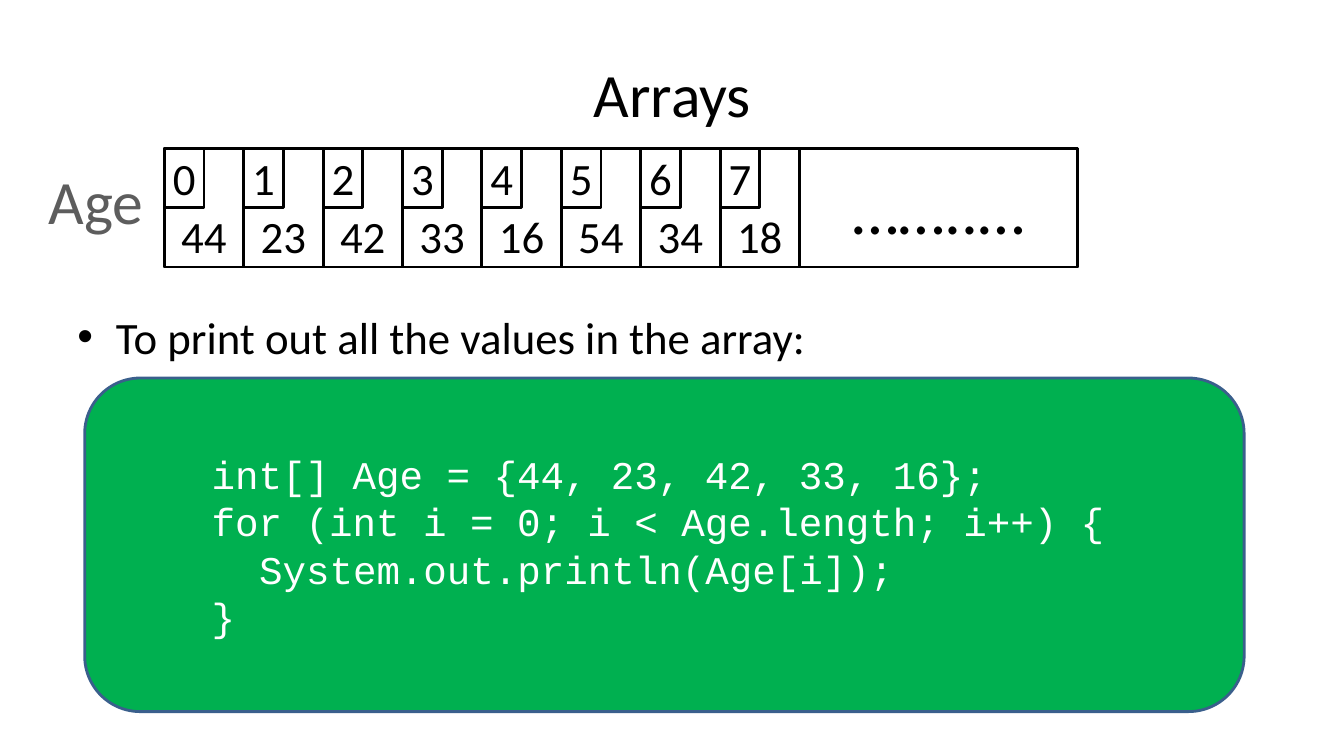
from lxml import etree
from pptx import Presentation
from pptx.dml.color import RGBColor
from pptx.enum.shapes import MSO_SHAPE
from pptx.enum.text import MSO_ANCHOR, PP_ALIGN
from pptx.oxml.ns import qn
from pptx.util import Inches, Pt

BLACK = RGBColor(0, 0, 0)
WHITE = RGBColor(0xFF, 0xFF, 0xFF)
GRAY = RGBColor(0x5D, 0x5D, 0x5D)
GREEN = RGBColor(0x00, 0xB0, 0x50)
BLUE = RGBColor(0x3A, 0x5F, 0x8C)
RECT, ROUNDED = MSO_SHAPE.RECTANGLE, MSO_SHAPE.ROUNDED_RECTANGLE
MIDDLE, BOTTOM, TOP = MSO_ANCHOR.MIDDLE, MSO_ANCHOR.BOTTOM, MSO_ANCHOR.TOP
LEFT, CENTER = PP_ALIGN.LEFT, PP_ALIGN.CENTER

AGES = [44, 23, 42, 33, 16, 54, 34, 18]
CODE_LINES = [
    ("int[] Age = {44, 23, 42, 33, 16};", 0),
    ("for (int i = 0; i < Age.length; i++) {", 0),
    ("System.out.println(Age[i]);", 1),
    ("}", 0),
]
CODE_MARGIN, CODE_STEP = 1, 0.47


def write(paragraph, text, size=32, font="Calibri", color=BLACK, align=CENTER,
          margin=0, indent=0, bullet=None):
    """Fill a paragraph with formatted text."""
    paragraph.alignment = align
    properties = paragraph._p.get_or_add_pPr()
    properties.set("marL", str(Inches(margin)))
    properties.set("indent", str(Inches(indent)))
    if bullet:
        etree.SubElement(properties, qn("a:buFont")).set("typeface", "Arial")
        etree.SubElement(properties, qn("a:buChar")).set("char", bullet)
    run = paragraph.add_run()
    run.text = text
    run.font.size = Pt(size)
    run.font.name = font
    run.font.color.rgb = color


def add_label(slide, box, text, anchor=MIDDLE, wrap=True, **text_format):
    """Place a line of free text in the given box."""
    frame = slide.shapes.add_textbox(*map(Inches, box)).text_frame
    frame.word_wrap = wrap
    frame.vertical_anchor = anchor
    write(frame.paragraphs[0], text, **text_format)


def add_panel(slide, box, kind=RECT, fill=None, line=BLACK, anchor=MIDDLE):
    """Draw an outlined panel and return its text frame."""
    panel = slide.shapes.add_shape(kind, *map(Inches, box))
    panel.shadow.inherit = False
    if fill is None:
        panel.fill.background()
    else:
        panel.fill.solid()
        panel.fill.fore_color.rgb = fill
    panel.line.color.rgb = line
    panel.line.width = Pt(2)
    panel.text_frame.word_wrap = True
    panel.text_frame.vertical_anchor = anchor
    return panel.text_frame


def add_array(slide, box, rest_width):
    """Draw the array cells, the open rest and the index corners."""
    left, top, width, height = box
    cell_width = (width - rest_width) / len(AGES)
    cell_lefts = [left + i * cell_width for i in range(len(AGES))]
    add_panel(slide, box)
    for cell_left, age in zip(cell_lefts, AGES):
        cell = add_panel(slide, (cell_left, top, cell_width, height), anchor=BOTTOM)
        write(cell.paragraphs[0], str(age))
    rest = add_panel(slide, (left + width - rest_width, top, rest_width, height))
    write(rest.paragraphs[0], "……..…", size=48)
    for index, cell_left in enumerate(cell_lefts):
        corner = add_panel(slide, (cell_left, top, cell_width / 2, height / 2))
        corner.margin_left = corner.margin_right = 0
        write(corner.paragraphs[0], str(index))


def add_code(slide, box):
    """Draw the rounded panel holding the code listing."""
    listing = add_panel(slide, box, kind=ROUNDED, fill=GREEN, line=BLUE)
    for number, (code, depth) in enumerate(CODE_LINES):
        paragraph = listing.add_paragraph() if number else listing.paragraphs[0]
        write(paragraph, code, size=28, font="Courier New", color=WHITE,
              align=LEFT, margin=CODE_MARGIN + depth * CODE_STEP)


def main():
    """Build and save the slide."""
    deck = Presentation()
    deck.slide_width, deck.slide_height = Inches(13.33), Inches(7.5)
    slide = deck.slides.add_slide(deck.slide_layouts[6])
    add_label(slide, (0.67, 0.3, 12, 1.25), "Arrays", size=44)
    add_array(slide, (1.63, 1.47, 9.06, 1.18), rest_width=2.76)
    add_label(slide, (0.67, 3.02, 12, 0.65),
              "To print out all the values in the array:", anchor=TOP,
              align=LEFT, margin=0.38, indent=-0.38, bullet="•")
    add_label(slide, (0.37, 1.57, 1.17, 0.84), "Age", anchor=TOP, wrap=False,
              size=44, color=GRAY)
    add_code(slide, (0.84, 3.75, 11.5, 3.31))
    deck.save("out.pptx")


if __name__ == "__main__":
    main()
